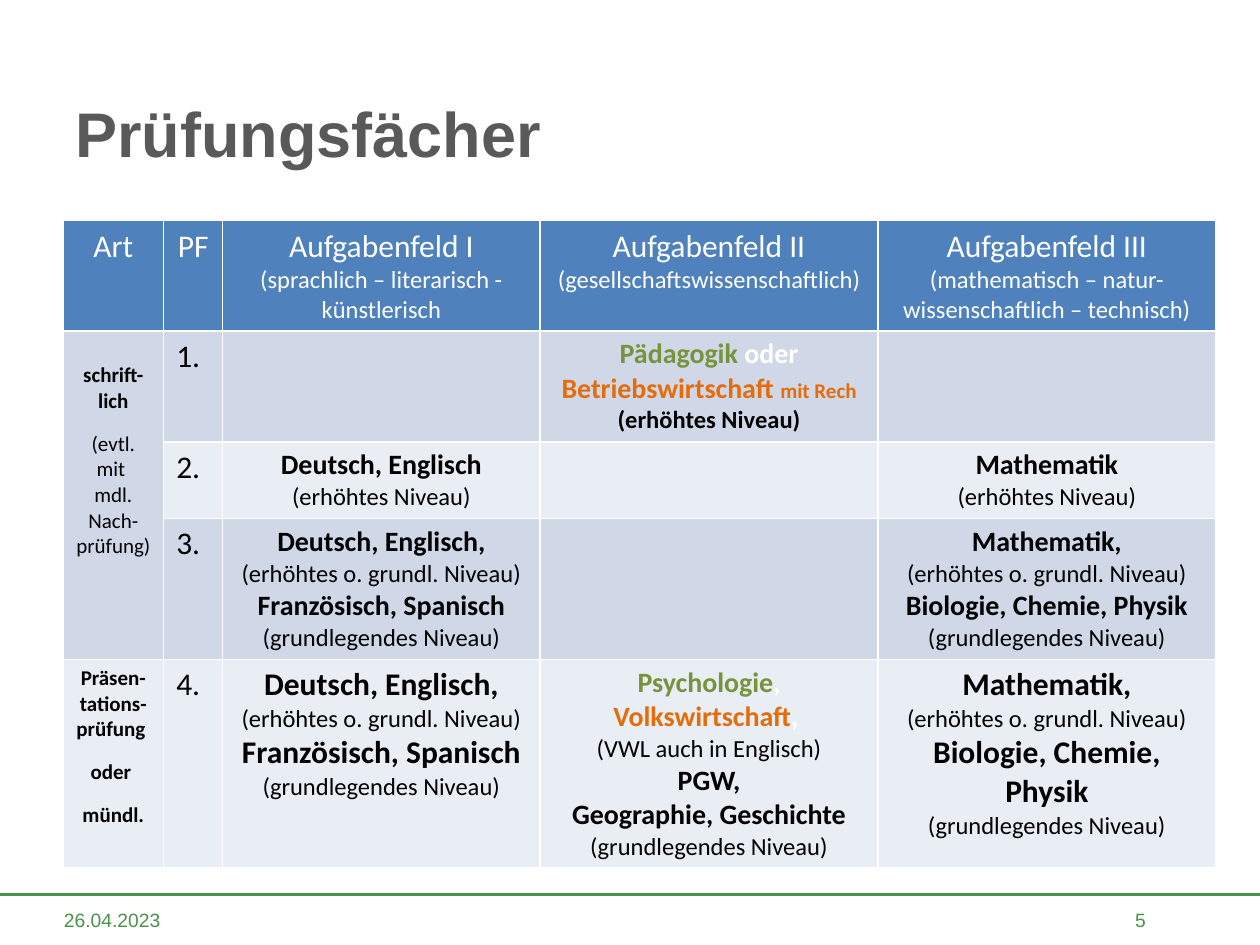
"""Build the slide with the table of examination subjects."""
from lxml.etree import SubElement
from pptx import Presentation
from pptx.dml.color import RGBColor
from pptx.enum.shapes import MSO_CONNECTOR
from pptx.enum.text import MSO_ANCHOR, PP_ALIGN
from pptx.oxml.ns import qn
from pptx.util import Cm, Pt

THEME = {
    "line": "499249",
    "border": "FFFFFF",
    "head": "4F81BD",
    "bands": ("D0D8E8", "E9EDF4"),
    "gap": Pt(10),
    "styles": {
        "title": ("Arial", 36, True, "595959"),
        "footer": ("Arial", 11, False, "499249"),
        "head": ("Calibri", 18, False, "FFFFFF"),
        "subhead": ("Calibri", 14, False, "FFFFFF"),
        "number": ("Calibri", 18, False, "000000"),
        "kind": ("Calibri", 12, True, "000000"),
        "kind_gap": ("Calibri", 12, True, "000000"),
        "note": ("Calibri", 12, False, "000000"),
        "note_gap": ("Calibri", 12, False, "000000"),
        "large": ("Calibri", 18, True, "000000"),
        "subject": ("Calibri", 16, True, "000000"),
        "level": ("Calibri", 14, False, "000000"),
        "level_bold": ("Calibri", 14, True, "000000"),
        "green": ("Calibri", 16, True, "77933C"),
        "orange": ("Calibri", 16, True, "E46C0A"),
        "orange_small": ("Calibri", 12, True, "E46C0A"),
        "white": ("Calibri", 16, True, "FFFFFF"),
    },
}


def write(tf, paragraphs, align):
    tf.word_wrap = True
    for i, runs in enumerate(paragraphs):
        p = tf.add_paragraph() if i else tf.paragraphs[0]
        p.alignment = align
        for style, text in runs:
            if style.endswith("_gap"):
                p.space_before = THEME["gap"]
            r = p.add_run()
            r.text = text
            name, size, bold, color = THEME["styles"][style]
            for key, value in {"name": name, "size": Pt(size), "bold": bold}.items():
                setattr(r.font, key, value)
            r.font.color.rgb = RGBColor.from_string(color)


def electives(style, first, second):
    return [
        [(style, first)],
        [("level", "(erhöhtes o. grundl. Niveau)")],
        [(style, second)],
        basic,
    ]


basic = [("level", "(grundlegendes Niveau)")]
advanced = [("level", "(erhöhtes Niveau)")]
languages = ("Deutsch, Englisch,", "Französisch, Spanisch")
sciences = ("Mathematik,", "Biologie, Chemie, Physik")

rows = [
    [
        [[("head", "Art")]],
        [[("head", "PF")]],
        [[("head", "Aufgabenfeld I")], [("subhead", "(sprachlich – literarisch - künstlerisch")]],
        [[("head", "Aufgabenfeld II")], [("subhead", "(gesellschaftswissenschaftlich)")]],
        [[("head", "Aufgabenfeld III")],
         [("subhead", "(mathematisch – natur-wissenschaftlich – technisch)")]],
    ],
    [
        [[("kind", "schrift-lich")], [("note_gap", "(evtl.")], [("note", "mit ")],
         [("note", "mdl. Nach-prüfung)")]],
        [[("number", "1.")]],
        [],
        [[("green", "Pädagogik "), ("white", "oder "), ("orange", "Betriebswirtschaft "),
          ("orange_small", "mit Rech")],
         [("level_bold", "(erhöhtes Niveau)")]],
        [],
    ],
    [
        [],
        [[("number", "2.")]],
        [[("subject", "Deutsch, Englisch")], advanced],
        [],
        [[("subject", "Mathematik")], advanced],
    ],
    [
        [],
        [[("number", "3.")]],
        electives("subject", *languages),
        [],
        electives("subject", *sciences),
    ],
    [
        [[("kind", "Präsen-tations-prüfung ")], [("kind_gap", "oder ")], [("kind_gap", "mündl.")]],
        [[("number", "4.")]],
        electives("large", *languages),
        [[("green", "Psychologie"), ("white", ", "), ("orange", "Volkswirtschaft"), ("white", ", ")],
         [("level", "(VWL auch in Englisch)")],
         [("subject", "PGW,")],
         [("subject", "Geographie, Geschichte")],
         basic],
        electives("large", *sciences),
    ],
]

prs = Presentation()
prs.slide_width, prs.slide_height = Cm(25.4), Cm(19.05)
s = prs.slides.add_slide(prs.slide_layouts[6])

rule = s.shapes.add_connector(MSO_CONNECTOR.STRAIGHT, Cm(-1.19), Cm(18.03), Cm(25.98), Cm(18.03))
rule.line.color.rgb = RGBColor.from_string(THEME["line"])
rule.line.width = Pt(1.5)
SubElement(rule._element.spPr, qn("a:effectLst"))

for style, text, box, align, anchor in [
    ("footer", "26.04.2023", (1.04, 18.03, 5.92, 1.02), PP_ALIGN.LEFT, MSO_ANCHOR.MIDDLE),
    ("footer", "5", (22, 18.03, 1.98, 1.02), PP_ALIGN.CENTER, MSO_ANCHOR.MIDDLE),
    ("title", "Prüfungsfächer", (1.27, 1.65, 22.86, 1.65), PP_ALIGN.LEFT, MSO_ANCHOR.TOP),
]:
    sp = s.shapes.add_textbox(*map(Cm, box))
    tf = sp.text_frame
    for key, value in {"vertical_anchor": anchor, "margin_top": Cm(0.25 if style == "title" else 0.13)}.items():
        setattr(tf, key, value)
    write(tf, [[(style, text)]], align)

widths = (2.03, 1.19, 6.4, 6.81, 6.81)
heights = (2.22, 2.24, 1.54, 2.84, 4.21)
table = s.shapes.add_table(len(heights), len(widths), Cm(1.27), Cm(4.45),
                           Cm(sum(widths)), Cm(sum(heights))).table
for column, width in zip(table.columns, widths):
    column.width = Cm(width)
for row, height in zip(table.rows, heights):
    row.height = Cm(height)

for i, row in enumerate(rows):
    for j, paragraphs in enumerate(row):
        cell = table.cell(i, j)
        tcPr = cell._tc.get_or_add_tcPr()
        for side in "LRTB":
            ln = SubElement(tcPr, qn(f"a:ln{side}"), w=str(Pt(1)))
            fill = SubElement(ln, qn("a:solidFill"))
            SubElement(fill, qn("a:srgbClr"), val=THEME["border"])
        band = 0 if j == 0 and i < 4 else (i - 1) % 2
        cell.fill.solid()
        cell.fill.fore_color.rgb = RGBColor.from_string(THEME["bands"][band] if i else THEME["head"])
        write(cell.text_frame, paragraphs, PP_ALIGN.LEFT if i and j == 1 else PP_ALIGN.CENTER)

table.cell(1, 0).merge(table.cell(3, 0))
table.cell(1, 0).margin_top = Cm(0.64)

prs.save("out.pptx")
